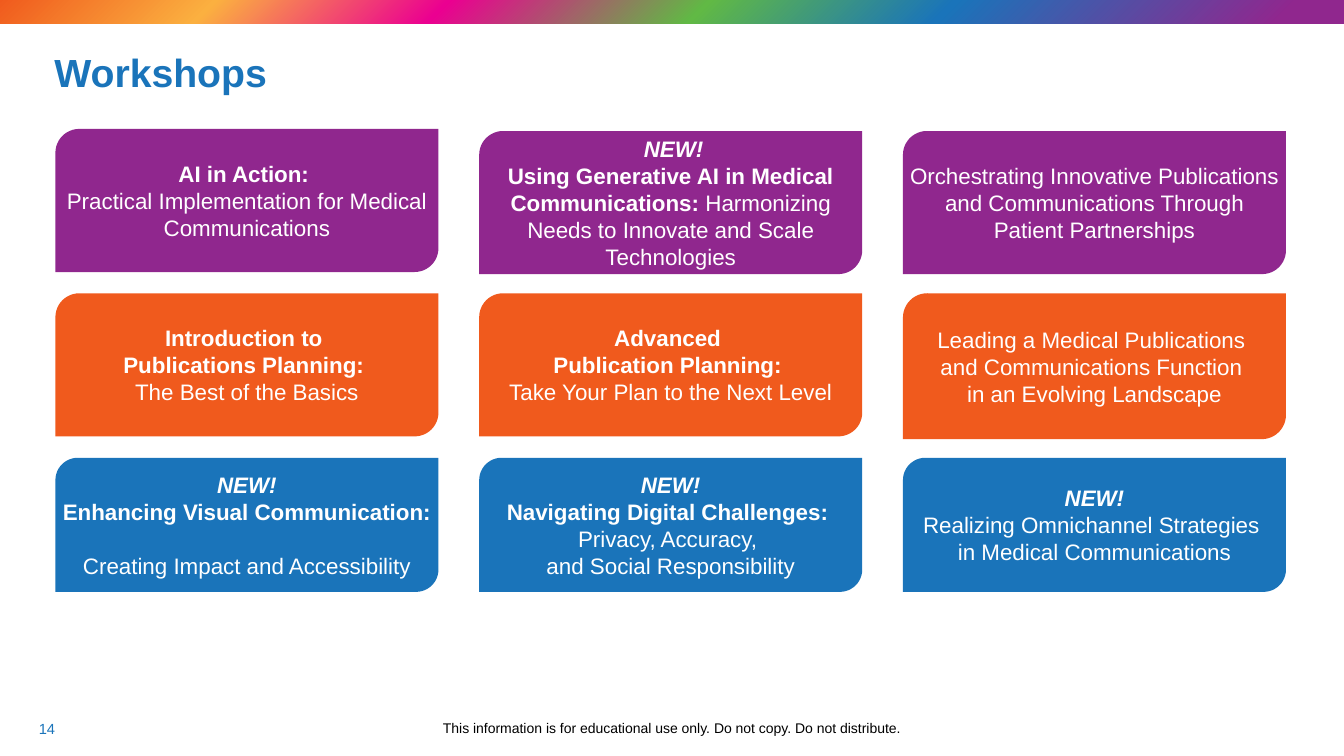
from lxml import etree
from pptx import Presentation
from pptx.dml.color import RGBColor
from pptx.enum import shapes, text
from pptx.oxml import ns
from pptx.util import Pt

PURPLE = RGBColor(0x90, 0x27, 0x8E)
ORANGE = RGBColor(0xF0, 0x5A, 0x1D)
BLUE = RGBColor(0x1A, 0x74, 0xBA)
YELLOW = RGBColor(0xFB, 0xB0, 0x40)
PINK = RGBColor(0xEB, 0x00, 0x91)
GREEN = RGBColor(0x61, 0xB9, 0x45)
WHITE = RGBColor(0xFF, 0xFF, 0xFF)
BLACK = RGBColor(0, 0, 0)

RAINBOW = [(0, ORANGE), (16, YELLOW), (33, PINK), (52, GREEN), (70, BLUE), (95, PURPLE)]

# Workshop grid
LEFT, COLUMN_PITCH, CARD_WIDTH = 39.6, 302.7, 273.6
NEW = [("NEW!", "bold italic")]

# Each row: colour, top, height, cards; each card: top shift, extra height, paragraphs
WORKSHOPS = [
    (PURPLE, 93.6, 102.2, [
        (-1.5, 0, [[("AI in Action: \n", "bold"),
                    ("Practical Implementation for Medical Communications", "")]]),
        (0, 0, [[(" ", "spacer")] + NEW,
                [("Using Generative AI in Medical Communications: ", "bold"),
                 ("Harmonizing Needs to Innovate and Scale Technologies", "")]]),
        (0, 0, [[("Orchestrating Innovative Publications and Communications "
                  "Through Patient Partnerships", "")]]),
    ]),
    (ORANGE, 209.5, 102.2, [
        (0, 0, [[("Introduction to \nPublications Planning: \n", "bold"),
                 ("The Best of the Basics", "")]]),
        (0, 0, [[("Advanced \nPublication Planning: \n", "bold"),
                 ("Take Your Plan to the Next Level", "")]]),
        (0, 2, [[("Leading a Medical Publications \nand Communications Function \n"
                  "in an Evolving Landscape", "")]]),
    ]),
    (BLUE, 327, 95.8, [
        (0, 0, [NEW, [("Enhancing Visual Communication: \n", "bold"),
                      ("Creating Impact and Accessibility", "")]]),
        (0, 0, [NEW, [("Navigating Digital Challenges: \n", "bold"),
                      ("Privacy, Accuracy, \nand Social Responsibility", "")]]),
        (0, 0, [NEW, [("Realizing Omnichannel Strategies \n"
                       "in Medical Communications", "")]]),
    ]),
]


def set_font(paragraph, size, color, bold=None):
    font = paragraph.font
    font.name, font.size, font.bold = "Arial", Pt(size), bold
    font.color.rgb = color


def add_block(slide, kind, left, top, width, height):
    block = slide.shapes.add_shape(kind, Pt(left), Pt(top), Pt(width), Pt(height))
    block.shadow.inherit = False
    block.line.fill.background()
    return block


def add_rainbow_bar(slide):
    bar = add_block(slide, shapes.MSO_SHAPE.RECTANGLE, -0.7, -0.7, 961.4, 17.2)
    bar.fill.gradient()
    bar.fill.gradient_angle = 315
    stops = bar.fill._fill._gradFill.find(ns.qn("a:gsLst"))
    for stop in list(stops):
        stops.remove(stop)
    for percent, color in RAINBOW:
        stop = etree.SubElement(stops, ns.qn("a:gs"), pos=str(percent * 1000))
        etree.SubElement(stop, ns.qn("a:srgbClr"), val=str(color))


def add_label(slide, words, left, top, width, height, size, color,
              bold=None, align=text.PP_ALIGN.CENTER, anchor=text.MSO_ANCHOR.TOP):
    frame = slide.shapes.add_textbox(Pt(left), Pt(top), Pt(width), Pt(height)).text_frame
    frame.word_wrap = True
    frame.vertical_anchor = anchor
    label = frame.paragraphs[0]
    label.text = words
    label.alignment = align
    set_font(label, size, color, bold)
    return label


def add_words(paragraph, words, style):
    for number, line in enumerate(words.split("\n")):
        if number:
            paragraph.add_line_break()
        if line:
            run = paragraph.add_run()
            run.text = line
            if "bold" in style:
                run.font.bold = True
            if "italic" in style:
                run.font.italic = True
            if style == "spacer":
                run.font.name = "Open Sans"


def add_card(slide, left, top, height, color, paragraphs):
    card = add_block(slide, shapes.MSO_SHAPE.ROUND_2_DIAG_RECTANGLE,
                     left, top, CARD_WIDTH, height)
    card.fill.solid()
    card.fill.fore_color.rgb = color
    frame = card.text_frame
    frame.word_wrap = True
    frame.vertical_anchor = text.MSO_ANCHOR.MIDDLE
    frame.margin_left = frame.margin_right = frame.margin_top = frame.margin_bottom = 0
    for number, runs in enumerate(paragraphs):
        paragraph = frame.add_paragraph() if number else frame.paragraphs[0]
        paragraph.alignment = text.PP_ALIGN.CENTER
        set_font(paragraph, 16, WHITE)
        for words, style in runs:
            add_words(paragraph, words, style)


def main():
    deck = Presentation()
    deck.slide_width, deck.slide_height = Pt(960), Pt(540)
    slide = deck.slides.add_slide(deck.slide_layouts[6])

    # Header
    add_rainbow_bar(slide)
    title = add_label(slide, "Workshops", 31.8, 15, 710.6, 77, 28, BLUE, True,
                      text.PP_ALIGN.LEFT, text.MSO_ANCHOR.MIDDLE)
    title.line_spacing = 0.9

    # Footer
    add_label(slide, "14", 17.3, 510.5, 32.4, 28.8, 10.5, BLUE)
    add_label(slide, "This information is for educational use only. "
              "Do not copy. Do not distribute.", 27.6, 510.5, 904.3, 28.8, 10, BLACK)

    # Workshop cards
    for color, top, height, cards in WORKSHOPS:
        for column, (shift, extra, paragraphs) in enumerate(cards):
            add_card(slide, LEFT + column * COLUMN_PITCH, top + shift,
                     height + extra, color, paragraphs)

    deck.save("out.pptx")


if __name__ == "__main__":
    main()
